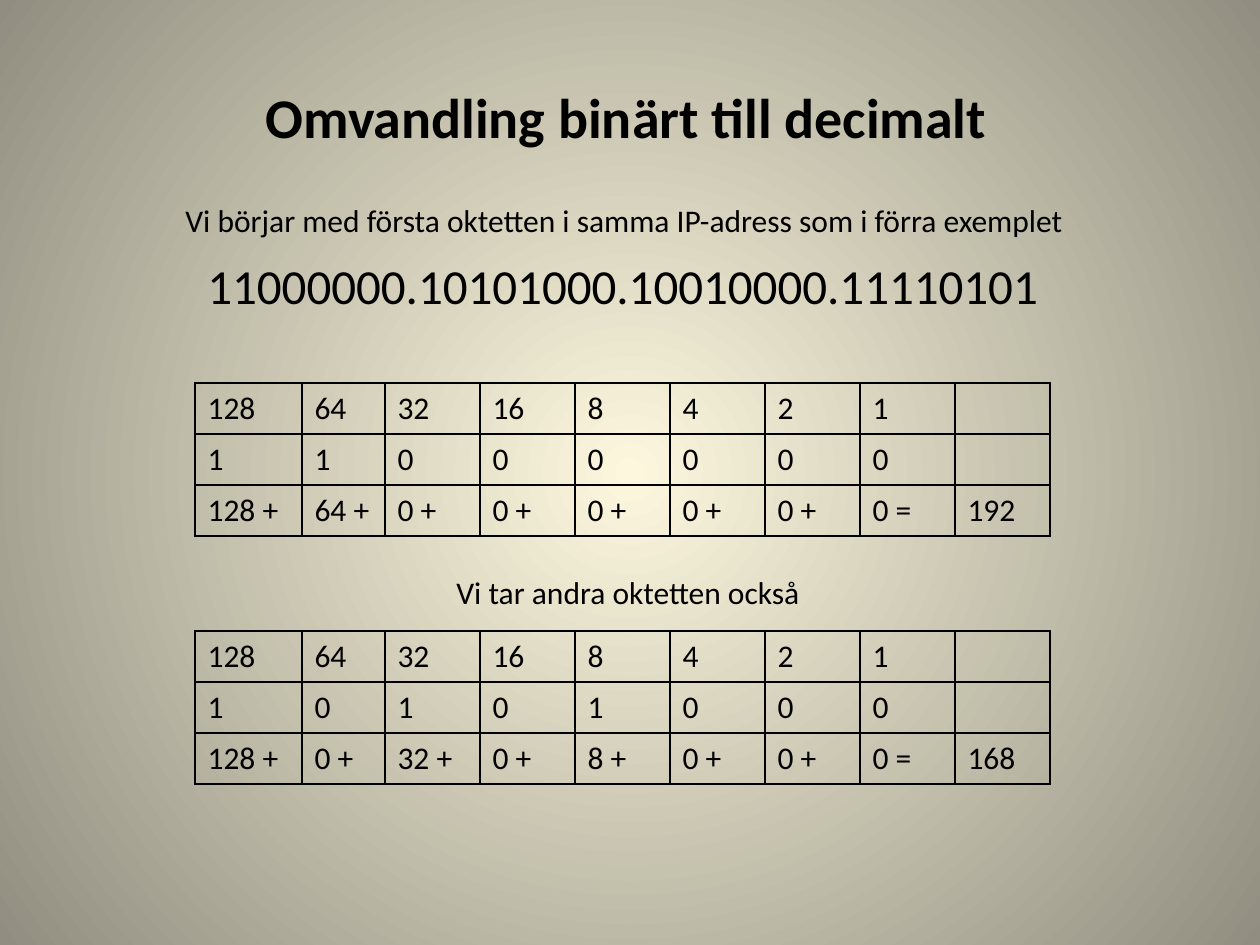
from dataclasses import dataclass

from lxml import etree
from pptx import Presentation, util as u
from pptx.dml.color import RGBColor
from pptx.enum import text
from pptx.oxml import parse_xml
from pptx.oxml.ns import nsdecls, qn

# Content: text boxes as (text, left, top, width, height, size name, bold)
TEXTS = [
    ("Omvandling binärt till decimalt", 253, 76, 753, 81, "title", True),
    ("11000000.10101000.10010000.11110101", 195, 249, 869, 72, "address", False),
    ("Vi börjar med första oktetten i samma IP-adress som i förra exemplet",
     173, 195, 913, 50, "body", False),
    ("Vi tar andra oktetten också", 444, 567, 373, 50, "body", False),
]
# Octets as (bits, table top)
OCTETS = [("11000000", 383), ("10101000", 631)]
WEIGHTS = [128, 64, 32, 16, 8, 4, 2, 1]

# Layout in px
PX = u.Inches(1) // 126
TABLE_LEFT, ROW_HEIGHT = 195, 51
COLUMNS = [107, 83] + [95] * 7


@dataclass(frozen=True)
class Theme:
    font: str = "Calibri"
    ink: str = "000000"
    center: str = "FCF7DD"
    edge: str = "918E81"
    title: int = 32
    address: int = 28
    body: int = 18


THEME = Theme()


def px(*lengths):
    return [length * PX for length in lengths]


def write(tf, content, size, bold=False):
    tf.text = content
    for r in tf.paragraphs[0].runs:
        r.font.name, r.font.size, r.font.bold = THEME.font, u.Pt(size), bold
        r.font.color.rgb = RGBColor.from_string(THEME.ink)


def radial_background(s):
    fill = s.background.fill
    fill.gradient()
    for stop, color in zip(fill.gradient_stops, (THEME.center, THEME.edge)):
        stop.color.rgb = RGBColor.from_string(color)
    grad = next(s.element.iter(qn("a:gradFill")))
    grad.remove(grad.find(qn("a:lin")))
    circle = etree.SubElement(grad, qn("a:path"), path="circle")
    etree.SubElement(circle, qn("a:fillToRect"),
                     l="50000", t="50000", r="50000", b="50000")


def add_label(s, content, left, top, width, height, size, bold):
    tf = s.shapes.add_textbox(*px(left, top, width, height)).text_frame
    tf.word_wrap = True
    tf.auto_size = text.MSO_AUTO_SIZE.SHAPE_TO_FIT_TEXT
    write(tf, content, getattr(THEME, size), bold)


def outline(cell):
    tc_pr = cell._tc.get_or_add_tcPr()
    for i, side in enumerate(("lnL", "lnR", "lnT", "lnB")):
        tc_pr.insert(i, parse_xml(
            f'<a:{side} {nsdecls("a")} w="{u.Pt(1)}"><a:solidFill>'
            f'<a:srgbClr val="{THEME.ink}"/></a:solidFill></a:{side}>'))


def octet_rows(bits):
    digits = [int(bit) for bit in bits]
    terms = [weight * digit for weight, digit in zip(WEIGHTS, digits)]
    sums = [f"{term} +" for term in terms[:-1]] + [f"{terms[-1]} ="]
    return [WEIGHTS + [""], digits + [""], sums + [sum(terms)]]


def add_octet_table(s, bits, top):
    rows = octet_rows(bits)
    table = s.shapes.add_table(
        len(rows), len(COLUMNS),
        *px(TABLE_LEFT, top, sum(COLUMNS), ROW_HEIGHT * len(rows))).table
    table.first_row = table.horz_banding = False
    for column, width in zip(table.columns, COLUMNS):
        column.width = width * PX
    for i, values in enumerate(rows):
        table.rows[i].height = ROW_HEIGHT * PX
        for j, value in enumerate(values):
            cell = table.cell(i, j)
            write(cell.text_frame, str(value), THEME.body)
            cell.fill.background()
            outline(cell)


def main():
    prs = Presentation()
    prs.slide_width, prs.slide_height = u.Inches(10), u.Inches(7.5)
    s = prs.slides.add_slide(prs.slide_layouts[6])
    radial_background(s)

    # Heading, address and captions
    for label in TEXTS:
        add_label(s, *label)

    # One conversion table per octet
    for bits, top in OCTETS:
        add_octet_table(s, bits, top)

    prs.save("out.pptx")


if __name__ == "__main__":
    main()
